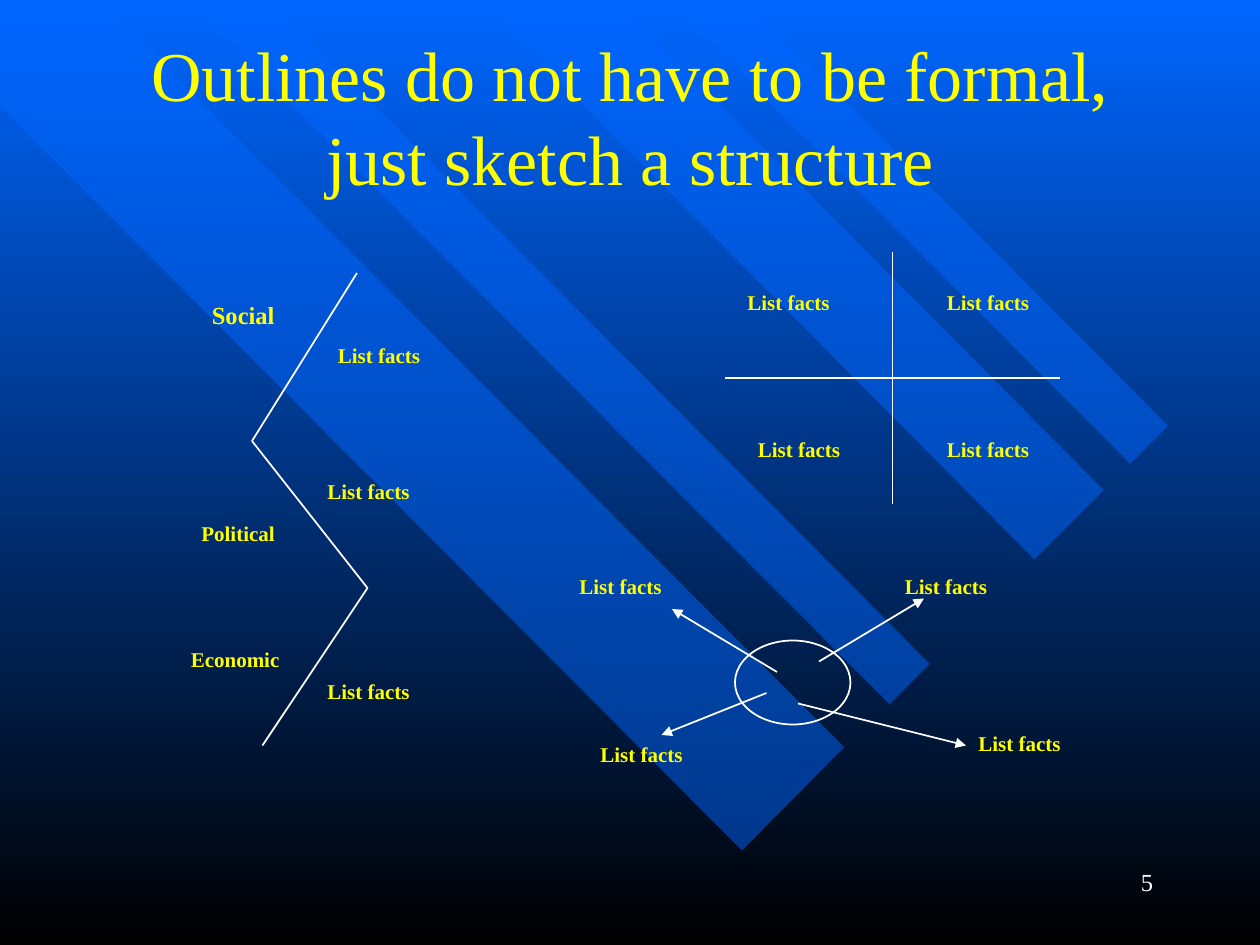
"""Build a slide that sketches three informal ways to outline an essay."""
from lxml import etree
from pptx import Presentation, util as u
from pptx.dml.color import RGBColor
from pptx.enum import shapes, text
from pptx.oxml.ns import qn

FONT, YELLOW, WHITE, BLUE, BLACK = "Times New Roman", "FFFF00", "FFFFFF", "0066FF", "000000"
GRID_PER_INCH = 12

TITLE = "Outlines do not have to be formal, just sketch a structure"
PAGE_NUMBER = "5"
FACTS = "List facts"

# Band corners are in hundredths of an inch, everything else in grid steps.
BANDS = [
    [(670, 593), (79, 0), (0, 0), (0, 84), (589, 675)],
    [(214, 0), (738, 527), (706, 559), (149, 0)],
    [(489, 0), (876, 389), (821, 444), (380, 0)],
    [(530, 0), (897, 368), (927, 338), (591, 0)],
]
ZIGZAG = [(34, 26), (24, 42), (35, 56), (25, 71)]
CROSS = [((85, 24), (85, 48)), ((69, 36), (101, 36))]
HUB = (70, 61, 11, 8)
SPOKES = [((78, 63), (88, 57)), ((76, 67), (92, 71)),
          ((74, 64), (64, 58)), ((73, 66), (63, 70))]
TOPICS = [("Social", 19, 28, 0.77, 14), ("Political", 18, 49, 0.79, 12),
          ("Economic", 17, 61, 0.91, 12)]
FACT_SPOTS = [
    (31, 32), (30, 45), (30, 64),
    (70, 27), (89, 27), (89, 41), (71, 41),
    (54, 54), (85, 54), (92, 69), (56, 70),
]


def inches(value):
    return u.Cm(value * 2.54)


def grid(*steps):
    return [inches(step / GRID_PER_INCH) for step in steps]


def color(value):
    return RGBColor.from_string(value)


def style(paragraph, size, value, bold=False, align=text.PP_ALIGN.LEFT):
    font = paragraph.font
    font.name, font.size, font.bold = FONT, u.Pt(size), bold
    font.color.rgb = color(value)
    paragraph.alignment = align


def paint_background(slide):
    fill = slide.background.fill
    fill.gradient()
    fill.gradient_angle = 270
    for stop, value in zip(fill.gradient_stops, (BLUE, BLACK)):
        stop.color.rgb = color(value)


def add_band(slide, corners):
    builder = slide.shapes.build_freeform(*corners[0], scale=inches(0.01))
    builder.add_line_segments(corners[1:], close=True)
    shape = builder.convert_to_shape()
    shape.shadow.inherit = False
    shape.line.fill.background()
    shape.fill.solid()
    shape.fill.fore_color.rgb = color(BLUE)
    solid = shape.fill._xPr.find(qn("a:solidFill"))
    etree.SubElement(solid[0], qn("a:alpha"), val="50000")


def add_line(slide, start, end, arrow=False):
    line = slide.shapes.add_connector(
        shapes.MSO_CONNECTOR.STRAIGHT, *grid(*start, *end))
    line.line.color.rgb = color(WHITE)
    line.line.width = u.Pt(1)
    if arrow:
        etree.SubElement(line.line._get_or_add_ln(), qn("a:tailEnd"), type="triangle")
    etree.SubElement(line._element.spPr, qn("a:effectLst"))


def add_label(slide, words, left, top, width=0.85, size=12):
    box = slide.shapes.add_textbox(*grid(left, top), inches(width), inches(size / 40))
    frame = box.text_frame
    frame.word_wrap = False
    frame.auto_size = text.MSO_AUTO_SIZE.SHAPE_TO_FIT_TEXT
    frame.text = words
    style(frame.paragraphs[0], size, YELLOW, bold=True)


def add_title(slide):
    title = slide.shapes.title
    title.left, title.top, title.width, title.height = grid(9, 3, 102, 16)
    frame = title.text_frame
    frame.text = TITLE
    frame.word_wrap = True
    frame.auto_size = text.MSO_AUTO_SIZE.NONE
    frame.vertical_anchor = text.MSO_ANCHOR.MIDDLE
    style(frame.paragraphs[0], 40, YELLOW, align=text.PP_ALIGN.CENTER)


def add_page_number(slide):
    frame = slide.shapes.add_textbox(*grid(86, 82, 25, 6)).text_frame
    frame.word_wrap = True
    frame.text = PAGE_NUMBER
    style(frame.paragraphs[0], 14, WHITE, align=text.PP_ALIGN.RIGHT)


def add_hub(slide):
    hub = slide.shapes.add_shape(shapes.MSO_SHAPE.OVAL, *grid(*HUB))
    hub.shadow.inherit = False
    hub.fill.background()
    hub.line.color.rgb = color(WHITE)
    hub.line.width = u.Pt(1)


def main():
    presentation = Presentation()
    presentation.slide_width, presentation.slide_height = inches(10), inches(7.5)
    slide = presentation.slides.add_slide(presentation.slide_layouts[5])
    paint_background(slide)
    for corners in BANDS:
        add_band(slide, corners)
    title = slide.shapes.title._element
    title.getparent().append(title)
    add_title(slide)
    add_page_number(slide)
    for start, end in [*zip(ZIGZAG, ZIGZAG[1:]), *CROSS]:
        add_line(slide, start, end)
    add_hub(slide)
    for start, end in SPOKES:
        add_line(slide, start, end, arrow=True)
    for topic in TOPICS:
        add_label(slide, *topic)
    for left, top in FACT_SPOTS:
        add_label(slide, FACTS, left, top)
    presentation.save("out.pptx")


if __name__ == "__main__":
    main()
